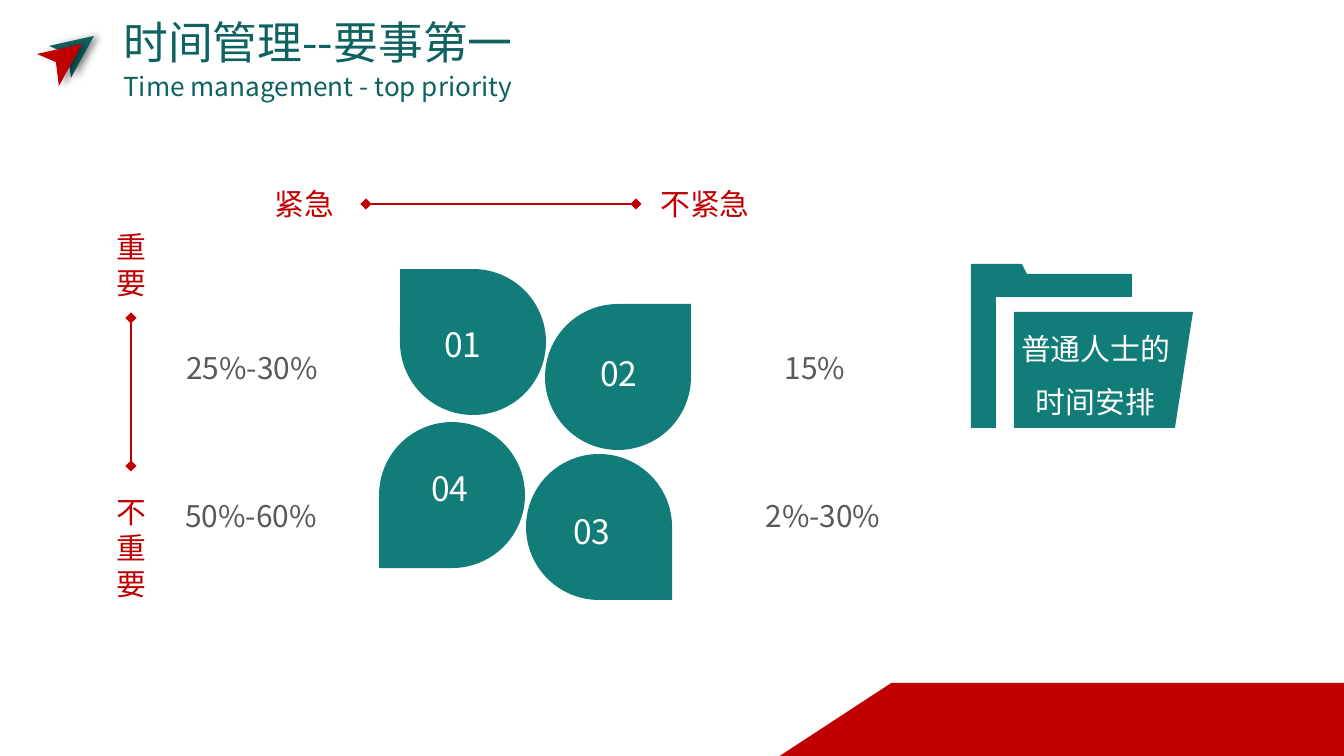
from lxml.etree import SubElement
from pptx import Presentation
from pptx.dml.color import RGBColor
from pptx.enum.shapes import MSO_CONNECTOR as Connector, MSO_SHAPE as Preset
from pptx.enum.text import MSO_AUTO_SIZE as AutoSize, PP_ALIGN as Align
from pptx.oxml.ns import qn
from pptx.util import Pt

PX = 914400 / 134.4
THEME = {
    "font": "Noto Sans CJK SC",
    "teal": RGBColor(0x12, 0x7C, 0x79),
    "dark teal": RGBColor(0x0E, 0x62, 0x60),
    "red": RGBColor(0xC0, 0x00, 0x00),
    "gray": RGBColor(0x59, 0x59, 0x59),
    "white": RGBColor(0xFF, 0xFF, 0xFF),
    "title": Pt(24),
    "number": Pt(18),
    "body": Pt(16),
    "subtitle": Pt(14),
}


def px(*lengths):
    return [round(length * PX) for length in lengths]


def add_text(text, box, size, color, align=Align.CENTER, wrap=True, spacing=None):
    frame = slide.shapes.add_textbox(*px(*box)).text_frame
    frame.word_wrap = wrap
    frame.auto_size = AutoSize.SHAPE_TO_FIT_TEXT
    paragraph = frame.paragraphs[0]
    run = paragraph.add_run()
    run.text = text
    paragraph.alignment = align
    paragraph.line_spacing = spacing
    paragraph.font.size = THEME[size]
    paragraph.font.name = THEME["font"]
    paragraph.font.color.rgb = THEME[color]
    # East Asian characters take their font from a:ea
    SubElement(run._r.get_or_add_rPr(), qn("a:ea"), typeface=THEME["font"])


presentation = Presentation()
presentation.slide_width, presentation.slide_height = px(1344, 756)
slide = presentation.slides.add_slide(presentation.slide_layouts[6])
filled_shapes = []

# Folder: front panel and back outline in one shape
builder = slide.shapes.build_freeform(1014, 312, scale=PX)
builder.add_line_segments([(1193, 312), (1175, 428), (1014, 428)])
builder.move_to(971, 264)
builder.add_line_segments([(1022, 264), (1027, 274), (1132, 274), (1132, 297),
                           (996, 297), (996, 428), (971, 428)])
filled_shapes.append((builder.convert_to_shape(), "teal"))

# Four petals
for left, top, rotation in [(379, 422, 180), (526, 454, 90), (400, 269, 270), (545, 304, 0)]:
    petal = slide.shapes.add_shape(Preset.TEAR, *px(left, top, 146, 146))
    petal.rotation = rotation
    filled_shapes.append((petal, "teal"))

# Corner banner
banner = slide.shapes.add_shape(Preset.FLOWCHART_MANUAL_INPUT, *px(1024, 437, 74, 566))
banner.rotation = 270
banner._element.spPr.get_or_add_xfrm().set("flipH", "1")
filled_shapes.append((banner, "red"))

# Two overlapping arrowheads beside the title
arrowheads = []
for shift_x, shift_y, color in [(0, 0, "dark teal"), (-12, 8, "red")]:
    points = [(x + shift_x, y + shift_y) for x, y in [(94, 36), (71, 78), (68, 54), (49, 46)]]
    builder = slide.shapes.build_freeform(*points[0], scale=PX)
    builder.add_line_segments(points[1:])
    arrowheads.append(builder.convert_to_shape())
    filled_shapes.append((arrowheads[-1], color))

for shape, color in filled_shapes:
    shape.shadow.inherit = False
    shape.fill.solid()
    shape.fill.fore_color.rgb = THEME[color]
    shape.line.fill.background()

for arrowhead in arrowheads:
    effects = arrowhead._element.spPr.find(qn("a:effectLst"))
    shadow = SubElement(effects, qn("a:outerShdw"), blurRad=str(Pt(4)), dist=str(Pt(3)),
                        dir="0", algn="l", rotWithShape="0")
    shadow_color = SubElement(shadow, qn("a:srgbClr"), val="000000")
    SubElement(shadow_color, qn("a:alpha"), val="40000")

# Axes
for ends in [(366, 204, 636, 204), (131, 318, 131, 466)]:
    axis = slide.shapes.add_connector(Connector.STRAIGHT, *px(*ends))
    axis.line.color.rgb = THEME["red"]
    axis.line.width = Pt(0.75)
    for end in ("a:headEnd", "a:tailEnd"):
        SubElement(axis.line._get_or_add_ln(), qn(end), type="diamond")
    SubElement(axis._element.spPr, qn("a:effectLst"))

add_text("Time management - top priority", (110, 64, 435, 46), "subtitle", "dark teal",
         Align.LEFT, wrap=False)
add_text("时间管理--要事第一", (110, 8, 497, 67), "title", "dark teal", Align.LEFT)

for number, left, top in [("01", 431, 317), ("02", 587, 346), ("03", 560, 504), ("04", 418, 461)]:
    add_text(number, (left, top, 69, 54), "number", "white", Align.LEFT, wrap=False)

for label, *box in [("紧急", 242, 179, 124, 50), ("不紧急", 643, 179, 124, 50),
                    ("重要", 100, 222, 62, 86), ("不重要", 100, 487, 62, 122)]:
    add_text(label, box, "body", "red")

for share, left, top in [("25%-30%", 150, 325), ("15%", 713, 325),
                         ("50%-60%", 149, 473), ("2%-30%", 721, 473)]:
    add_text(share, (left, top, 204, 62), "body", "gray", spacing=1.5)

add_text("普通人士的时间安排", (1000, 306, 191, 116), "body", "white", spacing=1.5)

presentation.save("out.pptx")
